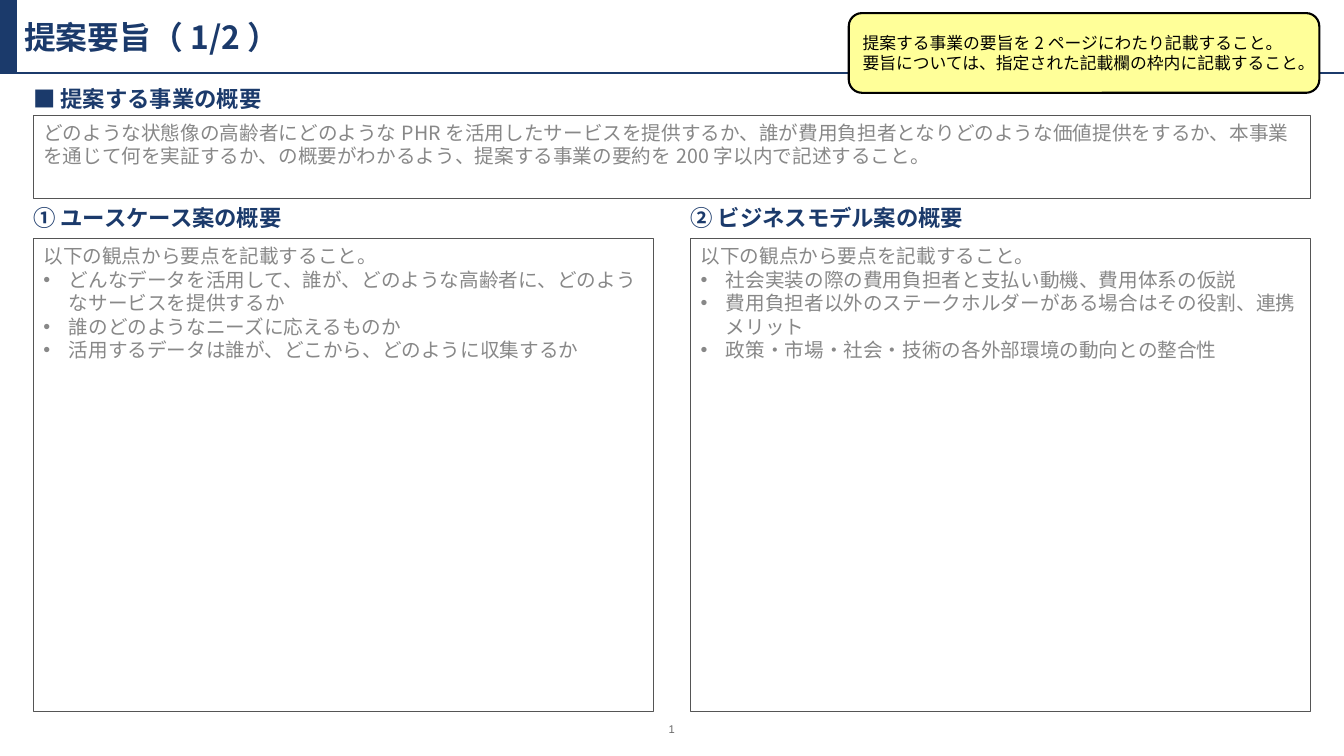
from lxml.etree import SubElement
from pptx import Presentation
from pptx.dml.color import RGBColor
from pptx.enum.shapes import MSO_CONNECTOR, MSO_SHAPE
from pptx.enum.text import MSO_ANCHOR as ANCHOR, MSO_AUTO_SIZE as AUTO_SIZE, PP_ALIGN as ALIGN
from pptx.oxml.ns import qn
from pptx.util import Cm, Pt

NAVY, GREY, BORDER = "1B3A6B", "888888", "555555"
JAPANESE = "Noto Sans CJK JP"
LEFT, FULL_WIDTH, COLUMN_WIDTH = 0.84, 32.18, 15.62
RIGHT_COLUMN = LEFT + FULL_WIDTH - COLUMN_WIDTH
HEADING_HEIGHT = 0.74


def paint(shape, fill, line, width):
    shape.fill.solid()
    shape.fill.fore_color.rgb = RGBColor.from_string(fill)
    shape.line.color.rgb = RGBColor.from_string(line)
    shape.line.width = Pt(width)


def write(shape, lines, size, color, bold=False, font=JAPANESE,
          anchor=ANCHOR.MIDDLE, align=ALIGN.LEFT, inset=None):
    """Fill a shape with lines; those starting with "• " become bullets."""
    frame = shape.text_frame
    frame.word_wrap = True
    frame.auto_size = AUTO_SIZE.NONE
    frame.vertical_anchor = anchor
    if inset is not None:
        frame.margin_left = frame.margin_right = Cm(inset)
        frame.margin_top = frame.margin_bottom = Cm(inset)
    for number, line in enumerate(lines):
        paragraph = frame.add_paragraph() if number else frame.paragraphs[0]
        paragraph.alignment = align
        paragraph.space_before = Pt(0)
        paragraph.line_spacing = Pt(round(size * 1.2, 1))
        bulleted = line.startswith("• ")
        properties = paragraph._p.get_or_add_pPr()
        indent = Cm(0.64) if bulleted else 0
        properties.set("marL", str(indent))
        properties.set("indent", str(-indent))
        if bulleted:
            SubElement(properties, qn("a:buFont"), typeface="Arial")
            SubElement(properties, qn("a:buChar"), char="•")
        else:
            SubElement(properties, qn("a:buNone"))
        run = paragraph.add_run()
        run.text = line.removeprefix("• ")
        run.font.size = Pt(size)
        run.font.bold = bold
        run.font.color.rgb = RGBColor.from_string(color)
        run.font.name = font
        SubElement(run._r.get_or_add_rPr(), qn("a:ea"), typeface=font)


deck = Presentation()
deck.slide_width, deck.slide_height = Cm(33.87), Cm(19.05)
slide = deck.slides.add_slide(deck.slide_layouts[3])
shapes = slide.shapes
title, use_case, business_model = slide.placeholders

# Title band
accent = shapes.add_shape(MSO_SHAPE.RECTANGLE, 0, 0, Cm(0.41), Cm(1.85))
accent.shadow.inherit = False
paint(accent, NAVY, NAVY, 1)

title.left, title.top, title.width, title.height = Cm(0.61), Cm(0.1), Cm(FULL_WIDTH), Cm(1.63)
write(title, ["提案要旨（1/2）"], 22.7, NAVY, bold=True, inset=0)

rule = shapes.add_connector(MSO_CONNECTOR.STRAIGHT, 0, Cm(1.85), deck.slide_width, Cm(1.85))
rule.line.color.rgb = RGBColor.from_string(NAVY)
rule.line.width = Pt(1.5)
SubElement(rule._element.spPr, qn("a:effectLst"))

# Section headings
for heading, left, top, width in [
    ("■ 提案する事業の概要", LEFT, 2.11, FULL_WIDTH),
    ("① ユースケース案の概要", LEFT, 5.11, COLUMN_WIDTH),
    ("② ビジネスモデル案の概要", RIGHT_COLUMN, 5.11, COLUMN_WIDTH),
]:
    label = shapes.add_textbox(Cm(left), Cm(top), Cm(width), Cm(HEADING_HEIGHT))
    write(label, [heading], 16, NAVY, bold=True, inset=0)

# Summary field
summary = shapes.add_shape(MSO_SHAPE.RECTANGLE, Cm(LEFT), Cm(2.92), Cm(FULL_WIDTH), Cm(2.08))
summary.shadow.inherit = False
paint(summary, "FFFFFF", BORDER, 0.75)
write(summary, [
    "どのような状態像の高齢者にどのようなPHRを活用したサービスを提供するか、"
    "誰が費用負担者となりどのような価値提供をするか、本事業を通じて何を実証するか、"
    "の概要がわかるよう、提案する事業の要約を200字以内で記述すること。",
], 14, GREY, anchor=ANCHOR.TOP)

# Two columns of points to cover
for column, left, points in [
    (use_case, LEFT, [
        "• どんなデータを活用して、誰が、どのような高齢者に、どのようなサービスを提供するか",
        "• 誰のどのようなニーズに応えるものか",
        "• 活用するデータは誰が、どこから、どのように収集するか",
    ]),
    (business_model, RIGHT_COLUMN, [
        "• 社会実装の際の費用負担者と支払い動機、費用体系の仮説",
        "• 費用負担者以外のステークホルダーがある場合はその役割、連携メリット",
        "• 政策・市場・社会・技術の各外部環境の動向との整合性",
    ]),
]:
    column.left, column.top = Cm(left), Cm(6.02)
    column.width, column.height = Cm(COLUMN_WIDTH), Cm(11.91)
    paint(column, "FFFFFF", BORDER, 0.75)
    write(column, ["以下の観点から要点を記載すること。", *points], 14, GREY, anchor=ANCHOR.TOP)

# Instruction callout
instruction = shapes.add_shape(MSO_SHAPE.ROUNDED_RECTANGLE, Cm(21.39), Cm(0.33), Cm(11.86), Cm(2.01))
instruction.shadow.inherit = False
paint(instruction, "FFFF99", "000000", 1.5)
write(instruction, [
    "提案する事業の要旨を2ページにわたり記載すること。",
    "要旨については、指定された記載欄の枠内に記載すること。",
], 12, "000000")

page_number = shapes.add_textbox(Cm(16.51), Cm(18.24), Cm(0.84), Cm(0.25))
write(page_number, ["1"], 8, "6B6B6B", font="Arial", align=ALIGN.CENTER, inset=0)

deck.save("out.pptx")
